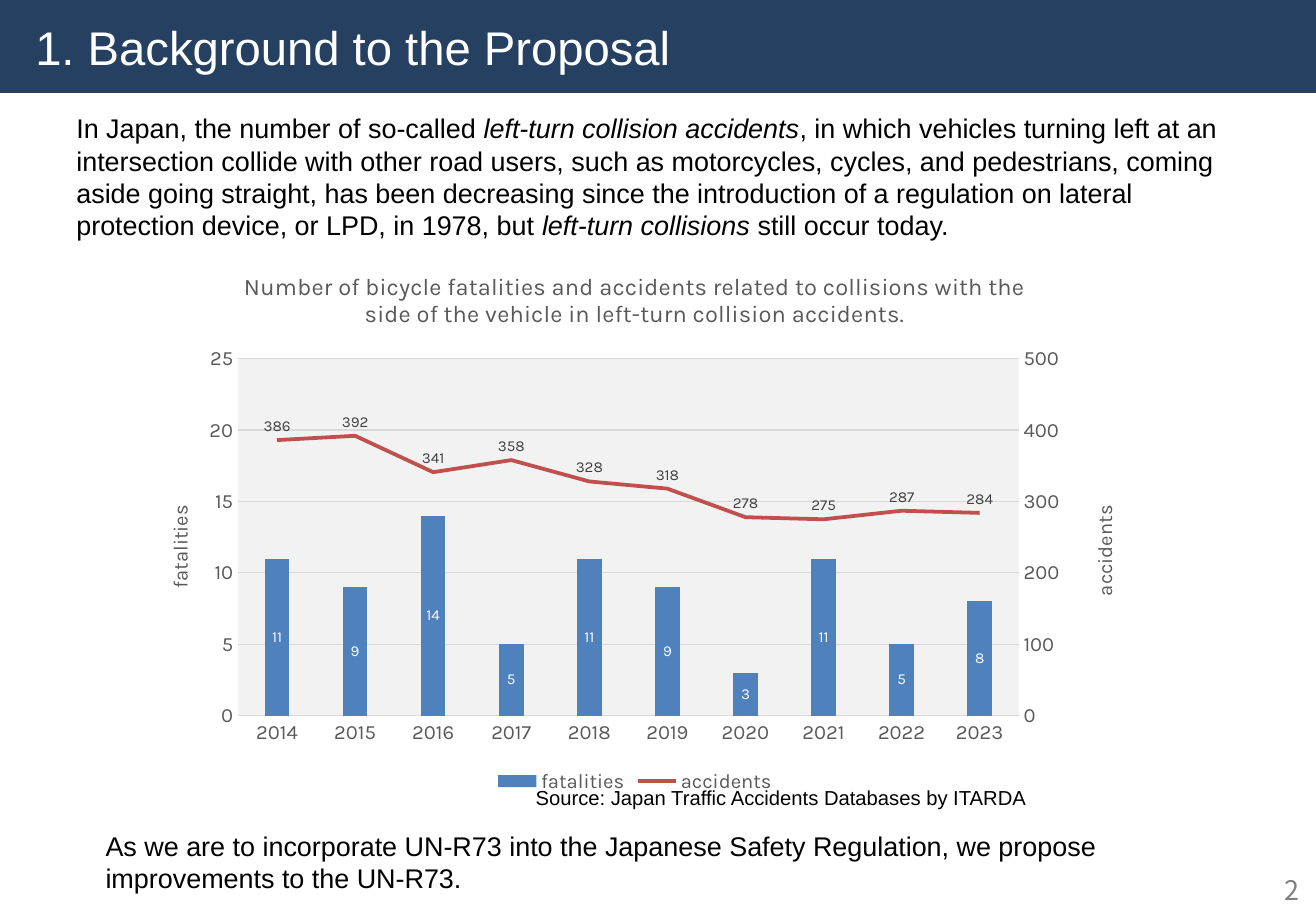
"""Build the background slide with its chart of left-turn collision accidents."""
from copy import deepcopy

from pptx import Presentation
from pptx.chart.axis import ValueAxis
from pptx.chart.data import CategoryChartData
from pptx.dml.color import RGBColor
from pptx.enum.chart import (XL_CHART_TYPE, XL_LABEL_POSITION, XL_LEGEND_POSITION,
                             XL_MARKER_STYLE, XL_TICK_MARK)
from pptx.enum.text import MSO_ANCHOR, PP_ALIGN
from pptx.oxml import parse_xml
from pptx.oxml.ns import nsdecls
from pptx.util import Inches, Pt

COLUMNS = XL_CHART_TYPE.COLUMN_CLUSTERED
BOTTOM = XL_LEGEND_POSITION.BOTTOM
CENTER, ABOVE = XL_LABEL_POSITION.CENTER, XL_LABEL_POSITION.ABOVE
NO_MARKER, NO_TICK = XL_MARKER_STYLE.NONE, XL_TICK_MARK.NONE
MIDDLE = MSO_ANCHOR.MIDDLE
LEFT, RIGHT, MID = PP_ALIGN.LEFT, PP_ALIGN.RIGHT, PP_ALIGN.CENTER
rgb = RGBColor.from_string
NAVY, GREY, PALE, BLUE, RED = "254061", "595959", "D9D9D9", "4F81BD", "C0504D"


def write_text(frame, *pieces, size=16, font="Arial", color="000000", align=LEFT):
    """Write the pieces as runs of one paragraph; every second piece is italic."""
    paragraph = frame.paragraphs[0]
    paragraph.alignment = align
    for number, piece in enumerate(pieces):
        run = paragraph.add_run()
        run.text = piece
        run.font.size, run.font.name = Pt(size), font
        run.font.bold, run.font.italic = False, number % 2 == 1
        run.font.color.rgb = rgb(color)


def place(parent, index, **shares):
    """Position a chart part by shares of the chart's size."""
    for old in parent.xpath("./c:layout"):
        parent.remove(old)
    target = '<c:layoutTarget val="inner"/>' if "w" in shares else ""
    modes = "".join(f'<c:{key}Mode val="edge"/>' for key in "xy")
    values = "".join(f'<c:{key} val="{value}"/>' for key, value in shares.items())
    parent.insert(index, parse_xml(
        f'<c:layout {nsdecls("c")}><c:manualLayout>{target}{modes}{values}'
        '</c:manualLayout></c:layout>'))


deck = Presentation()
deck.slide_width, deck.slide_height = Inches(10.83), Inches(7.5)
slide = deck.slides.add_slide(deck.slide_layouts[5])

heading = slide.shapes.title
heading.left, heading.top = 0, 0
heading.width, heading.height = deck.slide_width, Inches(0.76)
heading.fill.solid()
heading.fill.fore_color.rgb = rgb(NAVY)
heading.line.color.rgb = rgb(NAVY)
heading.line.width = Pt(0.75)
heading.text_frame.margin_left = Inches(0.29)
heading.text_frame.vertical_anchor = MIDDLE
write_text(heading.text_frame, "1. Background to the Proposal", size=28, color="FFFFFF")

accident_data = CategoryChartData()
accident_data.categories = [str(year) for year in range(2014, 2024)]
accident_data.add_series("fatalities", (11, 9, 14, 5, 11, 9, 3, 11, 5, 8))
accident_data.add_series("accidents", (386, 392, 341, 358, 328, 318, 278, 275, 287, 284))
chart = slide.shapes.add_chart(COLUMNS, Inches(1.09), Inches(2.05), Inches(8.27),
                               Inches(4.52), accident_data).chart
chart.font.size, chart.font.name = Pt(10), "Karla"
chart.has_title = True
write_text(chart.chart_title.text_frame,
           "Number of bicycle fatalities and accidents related to collisions with the "
           "side of the vehicle in left-turn collision accidents.",
           size=14, font="Karla", color=GREY, align=MID)
chart.has_legend = True
chart.legend.position = BOTTOM
chart.legend.include_in_layout = False

years, fatality_scale = chart.category_axis, chart.value_axis
years.format.line.color.rgb = rgb(PALE)
years.format.line.width = Pt(0.75)
fatality_scale.format.line.fill.background()
for axis in (years, fatality_scale):
    axis.major_tick_mark = axis.minor_tick_mark = NO_TICK
for font in (years.tick_labels.font, fatality_scale.tick_labels.font, chart.legend.font):
    font.size, font.name = Pt(12), "Karla"
    font.color.rgb = rgb(GREY)
gridlines = fatality_scale.major_gridlines.format.line
gridlines.color.rgb = rgb(PALE)
gridlines.width = Pt(0.75)

plot_area = chart.element.xpath(".//c:plotArea")[0]
bar_group = plot_area.xpath("./c:barChart")[0]
left_axes = plot_area.xpath("./c:catAx | ./c:valAx")
line_group = parse_xml(
    f'<c:lineChart {nsdecls("c")}><c:grouping val="standard"/><c:varyColors val="0"/>'
    '<c:marker val="1"/><c:axId val="5001"/><c:axId val="5002"/></c:lineChart>')
accident_series = bar_group.xpath("./c:ser")[1]
for flag in accident_series.xpath("./c:invertIfNegative"):
    accident_series.remove(flag)
line_group.insert(2, accident_series)
bar_group.addnext(line_group)

right_years, right_values = (deepcopy(axis) for axis in left_axes)
left_axes[-1].addnext(right_values)
right_values.addnext(right_years)
for axis, own, crossed in ((right_years, "5001", "5002"), (right_values, "5002", "5001")):
    axis.xpath("./c:axId")[0].set("val", own)
    axis.xpath("./c:crossAx")[0].set("val", crossed)
right_years.xpath("./c:delete")[0].set("val", "1")
right_values.xpath("./c:axPos")[0].set("val", "r")
right_values.xpath("./c:crosses")[0].set("val", "max")
accident_scale = ValueAxis(right_values)
accident_scale.has_major_gridlines = False

for axis, element, name, top, step, x, y in (
        (fatality_scale, left_axes[1], "fatalities", 25, 5, 0.03, 0.46),
        (accident_scale, right_values, "accidents", 500, 100, 0.95, 0.46)):
    axis.minimum_scale, axis.maximum_scale, axis.major_unit = 0, top, step
    write_text(axis.axis_title.text_frame, name, size=12, font="Karla", color=GREY, align=MID)
    element.xpath("./c:title//a:bodyPr")[0].set("rot", "-5400000")
    place(element.xpath("./c:title")[0], 1, x=x, y=y)

place(plot_area, 0, x=0.105, y=0.2, w=0.777, h=0.65)
plot_area.append(parse_xml(
    f'<c:spPr {nsdecls("c", "a")}><a:solidFill><a:srgbClr val="F2F2F2"/></a:solidFill></c:spPr>'))

bars, trend = chart.plots
bars.gap_width, bars.overlap, bars.vary_by_categories = 219, -27, False
fatalities, accidents = bars.series[0], trend.series[0]
fatalities.format.fill.solid()
fatalities.format.fill.fore_color.rgb = rgb(BLUE)
accidents.format.line.color.rgb = rgb(RED)
accidents.format.line.width = Pt(2.25)
accidents.marker.style = NO_MARKER
accidents.smooth = False
for series, position, color in ((fatalities, CENTER, "FFFFFF"), (accidents, ABOVE, "404040")):
    labels = series.data_labels
    labels.show_value, labels.position = True, position
    labels.font.size, labels.font.name = Pt(9), "Karla"
    labels.font.color.rgb = rgb(color)

introduction = (
    "In Japan, the number of so-called ", "left-turn collision accidents",
    ", in which vehicles turning left at an intersection collide with other road users, "
    "such as motorcycles, cycles, and pedestrians, coming aside going straight, has been "
    "decreasing since the introduction of a regulation on lateral protection device, or "
    "LPD, in 1978, but ", "left-turn collisions ", "still occur today.")
proposal = ("As we are to incorporate UN-R73 into the Japanese Safety Regulation, "
            "we propose improvements to the UN-R73.",)
source = ("Source: Japan Traffic Accidents Databases by ITARDA",)
page_format = {"font": "Noto Sans CJK JP", "color": "808080", "align": RIGHT}
for box, pieces, text_format in (
        ((0.53, 0.87, 9.61, 1.18), introduction, {}),
        ((0.77, 6.78, 9.69, 0.64), proposal, {}),
        ((4.31, 6.42, 4.44, 0.3), source, {"size": 12}),
        ((8.26, 7.17, 2.53, 0.31), ("2",), page_format)):
    frame = slide.shapes.add_textbox(*map(Inches, box)).text_frame
    frame.word_wrap = True
    if text_format is page_format:
        frame.vertical_anchor = MIDDLE
    write_text(frame, *pieces, **text_format)

deck.save("out.pptx")
